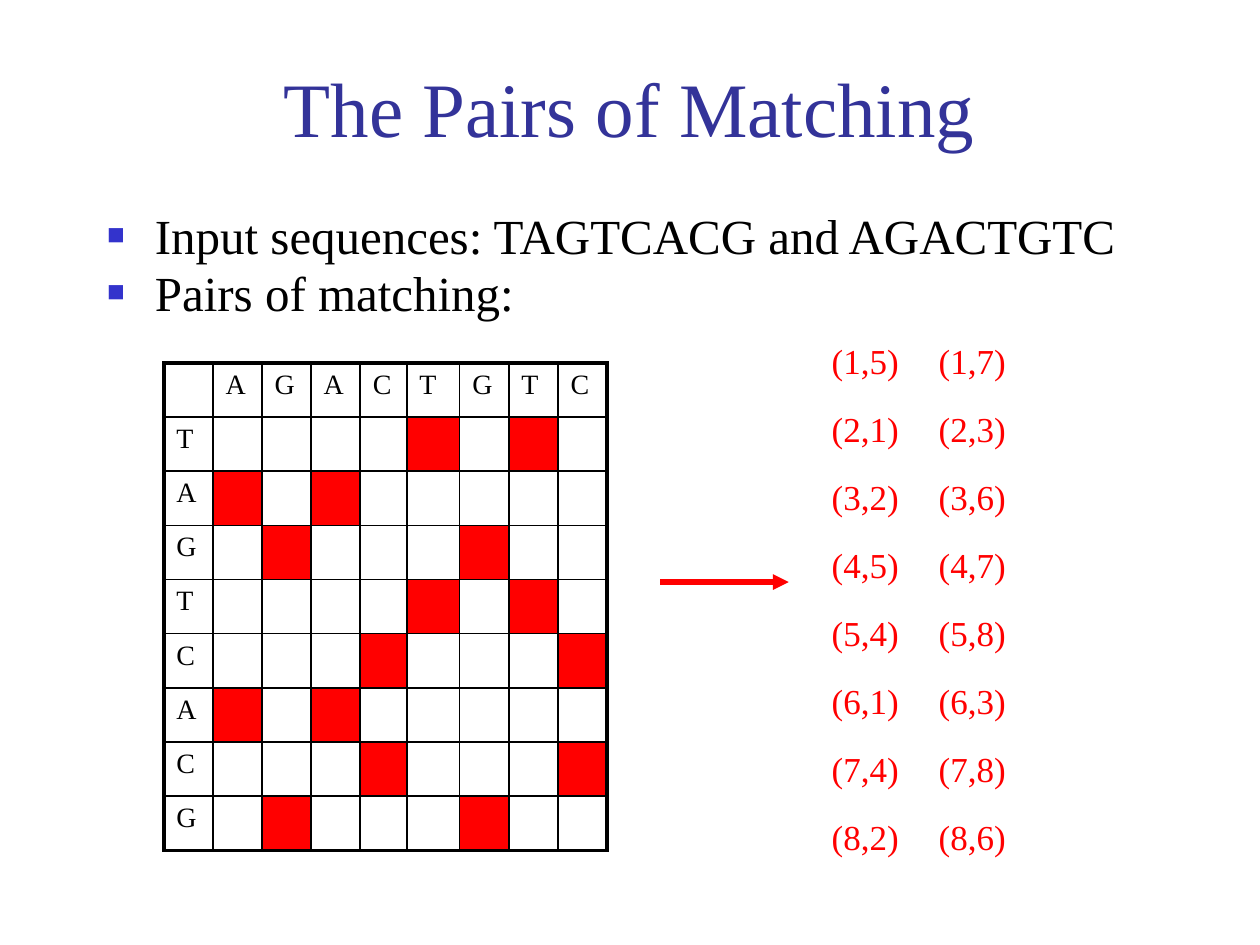
from lxml import etree
from pptx import Presentation
from pptx.dml.color import RGBColor
from pptx.enum.shapes import MSO_CONNECTOR
from pptx.enum.text import MSO_ANCHOR, MSO_AUTO_SIZE, PP_ALIGN
from pptx.oxml.ns import qn
from pptx.util import Inches, Pt

LINE = MSO_CONNECTOR.STRAIGHT
CENTER = PP_ALIGN.CENTER
BOTTOM, TOP = MSO_ANCHOR.BOTTOM, MSO_ANCHOR.TOP
NO_FIT = MSO_AUTO_SIZE.NONE

FONT = "Times New Roman"
BLACK = RGBColor(0x00, 0x00, 0x00)
RED = RGBColor(0xFF, 0x00, 0x00)
INDIGO = RGBColor(0x33, 0x33, 0x99)
BULLET_BLUE = RGBColor(0x33, 0x33, 0xCC)

ROW_SEQ = "TAGTCACG"
COL_SEQ = "AGACTGTC"
GRID_COLS = [0.39, 0.39, 0.39, 0.39, 0.37, 0.42, 0.39, 0.39, 0.39]
GRID_ROW = 0.43
PAIR_COLS = [0.85, 0.97]
PAIR_ROW = 0.54


def add_run(p, text, size, color):
    r = p.add_run()
    r.text = text
    r.font.name = FONT
    r.font.size = Pt(size)
    r.font.color.rgb = color


def add_plain_table(left, top, widths, row_height, n_rows):
    """Add a table without banding or cell fills."""
    frame = slide.shapes.add_table(n_rows, len(widths), Inches(left), Inches(top),
                                   Inches(sum(widths)), Inches(row_height * n_rows))
    table = frame.table
    table.first_row = table.horz_banding = False
    for column, width in zip(table.columns, widths):
        column.width = Inches(width)
    for cell in table.iter_cells():
        cell.fill.background()
    return table


prs = Presentation()
prs.slide_width, prs.slide_height = Inches(10), Inches(7.5)
slide = prs.slides.add_slide(prs.slide_layouts[1])

# Title
title = slide.shapes.title
title.left, title.top = Inches(0.83), Inches(0.42)
title.width, title.height = Inches(8.33), Inches(0.84)
tf = title.text_frame
tf.auto_size = NO_FIT
tf.vertical_anchor = BOTTOM
tf.paragraphs[0].alignment = CENTER
add_run(tf.paragraphs[0], "The Pairs of Matching", 44, INDIGO)

# Bulleted list
body = slide.placeholders[1]
body.left, body.top = Inches(0.75), Inches(1.67)
body.width, body.height = Inches(8.5), Inches(1)
tf = body.text_frame
tf.auto_size = NO_FIT
tf.vertical_anchor = TOP
for i, text in enumerate([f"Input sequences: {ROW_SEQ} and {COL_SEQ}", "Pairs of matching:"]):
    p = tf.add_paragraph() if i else tf.paragraphs[0]
    p.line_spacing = 0.8
    p.space_before = Pt(5.6)
    add_run(p, text, 28, BLACK)
    pPr = p._p.get_or_add_pPr()
    pPr.set("marL", str(Inches(0.38)))
    pPr.set("indent", str(-Inches(0.38)))
    color = etree.SubElement(pPr, qn("a:buClr"))
    etree.SubElement(color, qn("a:srgbClr"), val=str(BULLET_BLUE))
    etree.SubElement(pPr, qn("a:buSzPct"), val="60000")
    etree.SubElement(pPr, qn("a:buFont"), typeface=FONT)
    etree.SubElement(pPr, qn("a:buChar"), char="■")

# Matching matrix: headers, red matches, thick outer border
last = len(ROW_SEQ)
grid = add_plain_table(1.3, 2.88, GRID_COLS, GRID_ROW, last + 1)
for row in range(last + 1):
    for col in range(last + 1):
        cell = grid.cell(row, col)
        if row and col:
            if ROW_SEQ[row - 1] == COL_SEQ[col - 1]:
                cell.fill.solid()
                cell.fill.fore_color.rgb = RED
        elif row or col:
            letter = ROW_SEQ[row - 1] if row else COL_SEQ[col - 1]
            add_run(cell.text_frame.paragraphs[0], letter, 16, BLACK)
        tcPr = cell._tc.get_or_add_tcPr()
        outer = [("a:lnL", col == 0), ("a:lnR", col == last),
                 ("a:lnT", row == 0), ("a:lnB", row == last)]
        for i, (tag, thick) in enumerate(outer):
            ln = etree.Element(qn(tag), w=str(Pt(2.25 if thick else 1)))
            fill = etree.SubElement(ln, qn("a:solidFill"))
            etree.SubElement(fill, qn("a:srgbClr"), val=str(BLACK))
            tcPr.insert(i, ln)

# Matching pairs, one row per letter of the row sequence
pairs = add_plain_table(6.5, 2.67, PAIR_COLS, PAIR_ROW, last)
for row, letter in enumerate(ROW_SEQ):
    matches = [i for i, other in enumerate(COL_SEQ, 1) if other == letter]
    for col, match in enumerate(matches):
        p = pairs.cell(row, col).text_frame.paragraphs[0]
        add_run(p, f"({row + 1},{match})", 20, RED)

# Arrow from the matrix to the pairs
arrow = slide.shapes.add_connector(LINE, Inches(5.24), Inches(4.62), Inches(6.26), Inches(4.62))
arrow.line.color.rgb = RED
arrow.line.width = Pt(3)
etree.SubElement(arrow.line._get_or_add_ln(), qn("a:tailEnd"), type="triangle")
etree.SubElement(arrow._element.spPr, qn("a:effectLst"))

prs.save("out.pptx")
